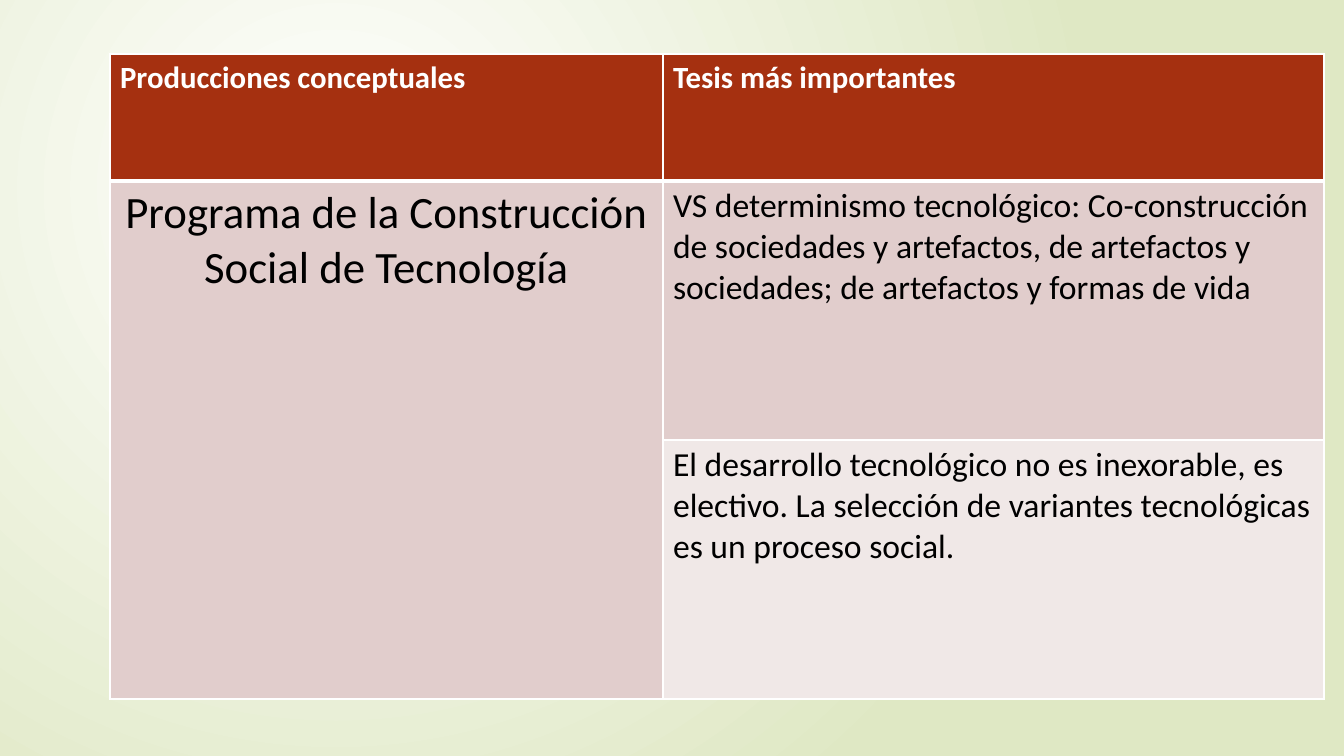
from lxml.etree import SubElement
from pptx import Presentation
from pptx.dml.color import RGBColor as Rgb
from pptx.enum.text import PP_ALIGN as Align
from pptx.oxml.ns import qn
from pptx.util import Pt

SCALE = 12192000 / 1344
COLORS = {
    "white": "FFFFFF",
    "black": "000000",
    "green": "DFE8C4",
    "rust": "A53010",
    "rose": "E1CDCC",
    "pale": "F0E8E7",
}


def px(n):
    return round(n * SCALE)


def rgb(name):
    return Rgb.from_string(COLORS[name])


class Deck:
    font = "Calibri"

    def __init__(self, wide, high):
        self.prs = Presentation()
        self.prs.slide_width = px(wide)
        self.prs.slide_height = px(high)
        self.slide = self.prs.slides.add_slide(self.prs.slide_layouts[6])

    def glow(self, inner, outer):
        fill = self.slide.background.fill
        fill.gradient()
        for stop, name, spot in zip(fill.gradient_stops, (inner, outer), (0, 1)):
            stop.color.rgb = rgb(name)
            stop.position = spot
        grad = self.slide._element.find(".//" + qn("a:gradFill"))
        grad.remove(grad.find(qn("a:lin")))
        path = SubElement(grad, qn("a:path"), path="circle")
        SubElement(path, qn("a:fillToRect"), l="50000", t="50000", r="100000", b="100000")

    def table(self, left, top, cols, rows):
        frame = self.slide.shapes.add_table(
            len(rows), len(cols), px(left), px(top), px(sum(cols)), px(sum(rows)))
        grid = frame.table
        for col, wide in zip(grid.columns, cols):
            col.width = px(wide)
        for row, high in zip(grid.rows, rows):
            row.height = px(high)
        return grid

    def border(self, cell, name, top, bottom):
        props = cell._tc.get_or_add_tcPr()
        sides = (("L", 1), ("R", 1), ("T", top), ("B", bottom))
        for spot, (side, width) in enumerate(sides):
            line = SubElement(props, qn("a:ln" + side), w=str(Pt(width)))
            fill = SubElement(line, qn("a:solidFill"))
            SubElement(fill, qn("a:srgbClr"), val=COLORS[name])
            props.insert(spot, line)

    def cell(self, cell, text, fill, size, color="black", bold=False, align=Align.LEFT):
        cell.fill.solid()
        cell.fill.fore_color.rgb = rgb(fill)
        para = cell.text_frame.paragraphs[0]
        para.alignment = align
        run = para.add_run()
        run.text = text
        run.font.name = self.font
        run.font.size = Pt(size)
        run.font.bold = bold
        run.font.color.rgb = rgb(color)


def main():
    deck = Deck(1344, 756)
    deck.glow("white", "green")
    grid = deck.table(110, 54, (553, 661), (127, 259, 259))
    grid.cell(1, 0).merge(grid.cell(2, 0))

    for col, head in enumerate(("Producciones conceptuales", "Tesis más importantes")):
        deck.cell(grid.cell(0, col), head, "rust", 22, "white", True)
    deck.cell(grid.cell(1, 0), "Programa de la Construcción Social de Tecnología",
              "rose", 32, align=Align.CENTER)
    theses = (
        ("VS determinismo tecnológico: Co-construcción de sociedades y artefactos, "
         "de artefactos y sociedades; de artefactos y formas de vida", "rose"),
        ("El desarrollo tecnológico no es inexorable, es electivo. "
         "La selección de variantes tecnológicas es un proceso social.", "pale"),
    )
    for row, (text, fill) in enumerate(theses, 1):
        deck.cell(grid.cell(row, 1), text, fill, 24)

    for row in range(3):
        for col in range(2):
            deck.border(grid.cell(row, col), "white",
                        top=3 if row == 1 else 1, bottom=3 if row == 0 else 1)
    deck.prs.save("out.pptx")


if __name__ == "__main__":
    main()
